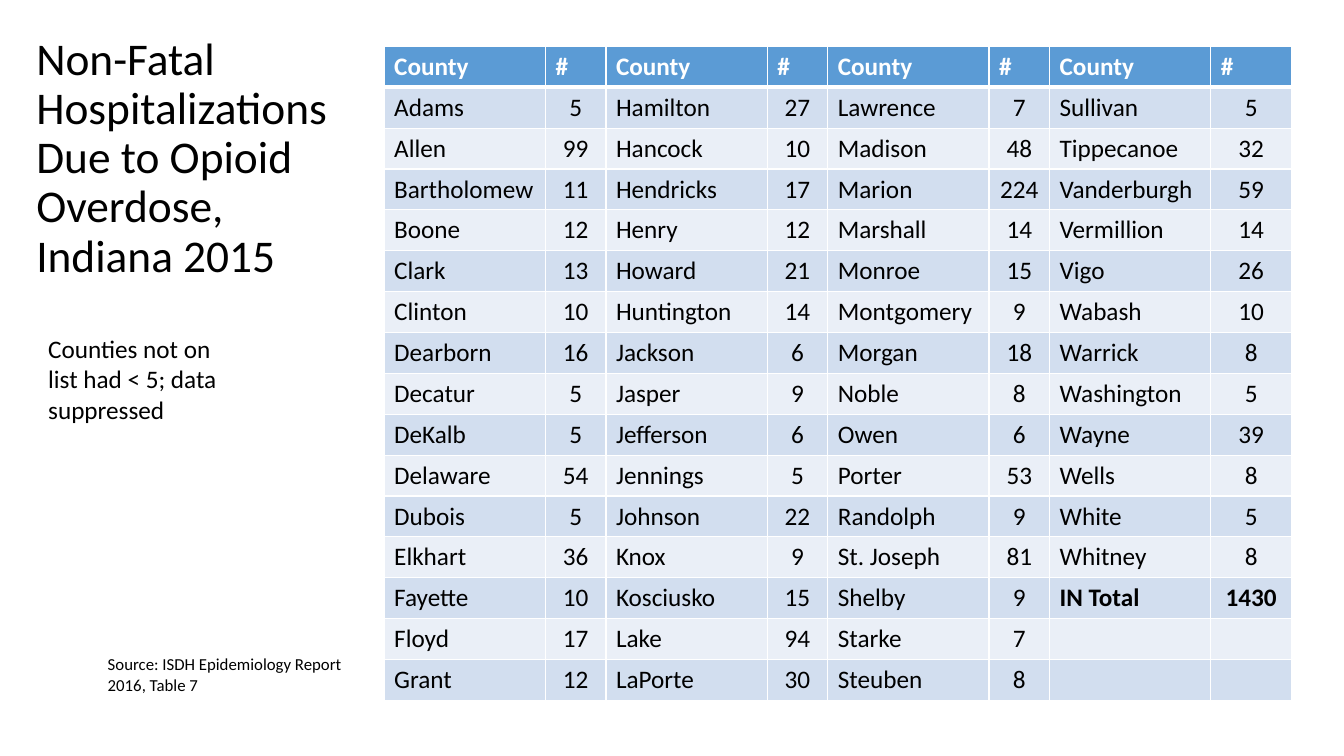
import dataclasses
import itertools

import lxml.etree
import pptx
import pptx.dml.color
import pptx.enum.text
import pptx.oxml.ns
import pptx.util

Inches = pptx.util.Inches
RGB = pptx.dml.color.RGBColor.from_string
ALIGN = pptx.enum.text.PP_ALIGN
ANCHOR = pptx.enum.text.MSO_ANCHOR
AUTO_SIZE = pptx.enum.text.MSO_AUTO_SIZE


@dataclasses.dataclass(frozen=True)
class Theme:
    """Colours, font and type sizes of the slide."""

    font: str = "Calibri"
    ink: str = "000000"
    paper: str = "FFFFFF"
    header: str = "5B9BD5"
    bands: tuple = ("D2DEEF", "EAEFF7")
    title_size: float = 32.4
    body_size: float = 18
    source_size: float = 12
    rule: float = 1
    header_rule: float = 3


COUNTY_GROUPS = [
    [("Adams", 5), ("Allen", 99), ("Bartholomew", 11), ("Boone", 12), ("Clark", 13),
     ("Clinton", 10), ("Dearborn", 16), ("Decatur", 5), ("DeKalb", 5), ("Delaware", 54),
     ("Dubois", 5), ("Elkhart", 36), ("Fayette", 10), ("Floyd", 17), ("Grant", 12)],
    [("Hamilton", 27), ("Hancock", 10), ("Hendricks", 17), ("Henry", 12), ("Howard", 21),
     ("Huntington", 14), ("Jackson", 6), ("Jasper", 9), ("Jefferson", 6), ("Jennings", 5),
     ("Johnson", 22), ("Knox", 9), ("Kosciusko", 15), ("Lake", 94), ("LaPorte", 30)],
    [("Lawrence", 7), ("Madison", 48), ("Marion", 224), ("Marshall", 14), ("Monroe", 15),
     ("Montgomery", 9), ("Morgan", 18), ("Noble", 8), ("Owen", 6), ("Porter", 53),
     ("Randolph", 9), ("St. Joseph", 81), ("Shelby", 9), ("Starke", 7), ("Steuben", 8)],
    [("Sullivan", 5), ("Tippecanoe", 32), ("Vanderburgh", 59), ("Vermillion", 14), ("Vigo", 26),
     ("Wabash", 10), ("Warrick", 8), ("Washington", 5), ("Wayne", 39), ("Wells", 8),
     ("White", 5), ("Whitney", 8), ("IN Total", 1430)],
]
TOTAL_ENTRY = COUNTY_GROUPS[-1][-1]


class SlideBuilder:
    """Holds the theme and the current slide, and adds each kind of element."""

    def __init__(self, slide, theme):
        """Keep the slide and the theme."""
        self.slide = slide
        self.theme = theme

    def set_text(self, frame, text, size, color=None, bold=False, **paragraph_format):
        """Put formatted text into a text frame."""
        paragraph = frame.paragraphs[0]
        paragraph.text = text
        for name, value in paragraph_format.items():
            setattr(paragraph, name, value)
        font_format = {"name": self.theme.font, "size": pptx.util.Pt(size), "bold": bold}
        for run in paragraph.runs:
            for name, value in font_format.items():
                setattr(run.font, name, value)
            run.font.color.rgb = RGB(color or self.theme.ink)

    def title(self, text, left, top, width, height):
        """Move and fill the title placeholder."""
        heading = self.slide.shapes.title
        place = {"left": left, "top": top, "width": width, "height": height}
        for name, value in place.items():
            setattr(heading, name, Inches(value))
        frame_format = {"word_wrap": True, "auto_size": AUTO_SIZE.NONE,
                        "vertical_anchor": ANCHOR.MIDDLE}
        for name, value in frame_format.items():
            setattr(heading.text_frame, name, value)
        self.set_text(heading.text_frame, text, self.theme.title_size,
                      alignment=ALIGN.LEFT, line_spacing=0.9)

    def text(self, text, left, top, width, height, size, wrap=True):
        """Add a text box."""
        frame = self.slide.shapes.add_textbox(*map(Inches, (left, top, width, height))).text_frame
        frame.word_wrap = wrap
        frame.auto_size = AUTO_SIZE.SHAPE_TO_FIT_TEXT
        self.set_text(frame, text, size)

    def borders(self, cell, bottom):
        """Draw the four rules around a table cell."""
        qn = pptx.oxml.ns.qn
        properties = cell._tc.get_or_add_tcPr()
        for side in "LRTB":
            weight = bottom if side == "B" else self.theme.rule
            line = lxml.etree.SubElement(properties, qn(f"a:ln{side}"),
                                         w=str(pptx.util.Pt(weight)))
            fill = lxml.etree.SubElement(line, qn("a:solidFill"))
            lxml.etree.SubElement(fill, qn("a:srgbClr"), val=self.theme.paper)

    def cell(self, cell, text, fill, bottom, **text_format):
        """Fill, rule and label one table cell."""
        self.borders(cell, bottom)
        cell.fill.solid()
        cell.fill.fore_color.rgb = RGB(fill)
        self.set_text(cell.text_frame, text, self.theme.body_size, **text_format)

    def county_table(self, groups, left, top, widths, row_height):
        """Add the table with county groups side by side."""
        theme = self.theme
        entries = list(itertools.zip_longest(*groups, fillvalue=("", "")))
        row_count = len(entries) + 1
        table = self.slide.shapes.add_table(
            row_count, len(widths), Inches(left), Inches(top),
            Inches(sum(widths)), Inches(row_height * row_count)).table
        table.horz_banding = False
        for column, width in zip(table.columns, widths):
            column.width = Inches(width)
        for row in table.rows:
            row.height = Inches(row_height)
        for column, label in enumerate(("County", "#") * len(groups)):
            self.cell(table.cell(0, column), label, theme.header, theme.header_rule,
                      color=theme.paper, bold=True)
        for row, line in enumerate(entries, start=1):
            band = theme.bands[(row - 1) % 2]
            for group, entry in enumerate(line):
                for part, alignment in enumerate((ALIGN.LEFT, ALIGN.CENTER)):
                    self.cell(table.cell(row, 2 * group + part), str(entry[part]), band,
                              theme.rule, bold=entry == TOTAL_ENTRY, alignment=alignment)


def main():
    """Build the slide and save it."""
    deck = pptx.Presentation()
    deck.slide_width, deck.slide_height = Inches(13.33), Inches(7.5)
    theme = Theme()
    builder = SlideBuilder(deck.slides.add_slide(deck.slide_layouts[5]), theme)
    builder.title("Non-Fatal Hospitalizations Due to Opioid Overdose, Indiana 2015",
                  0.26, 0.89, 3.26, 1.38)
    builder.county_table(COUNTY_GROUPS, 3.81, 0.46, [1.6, 0.6] * 3 + [1.6, 0.8], 6.48 / 16)
    builder.text("Source: ISDH Epidemiology Report\v2016, Table 7",
                 0.97, 6.44, 2.55, 0.5, theme.source_size, wrap=False)
    builder.text("Counties not on list had < 5; data suppressed",
                 0.38, 3.26, 1.97, 1.01, theme.body_size)
    deck.save("out.pptx")


if __name__ == "__main__":
    main()
